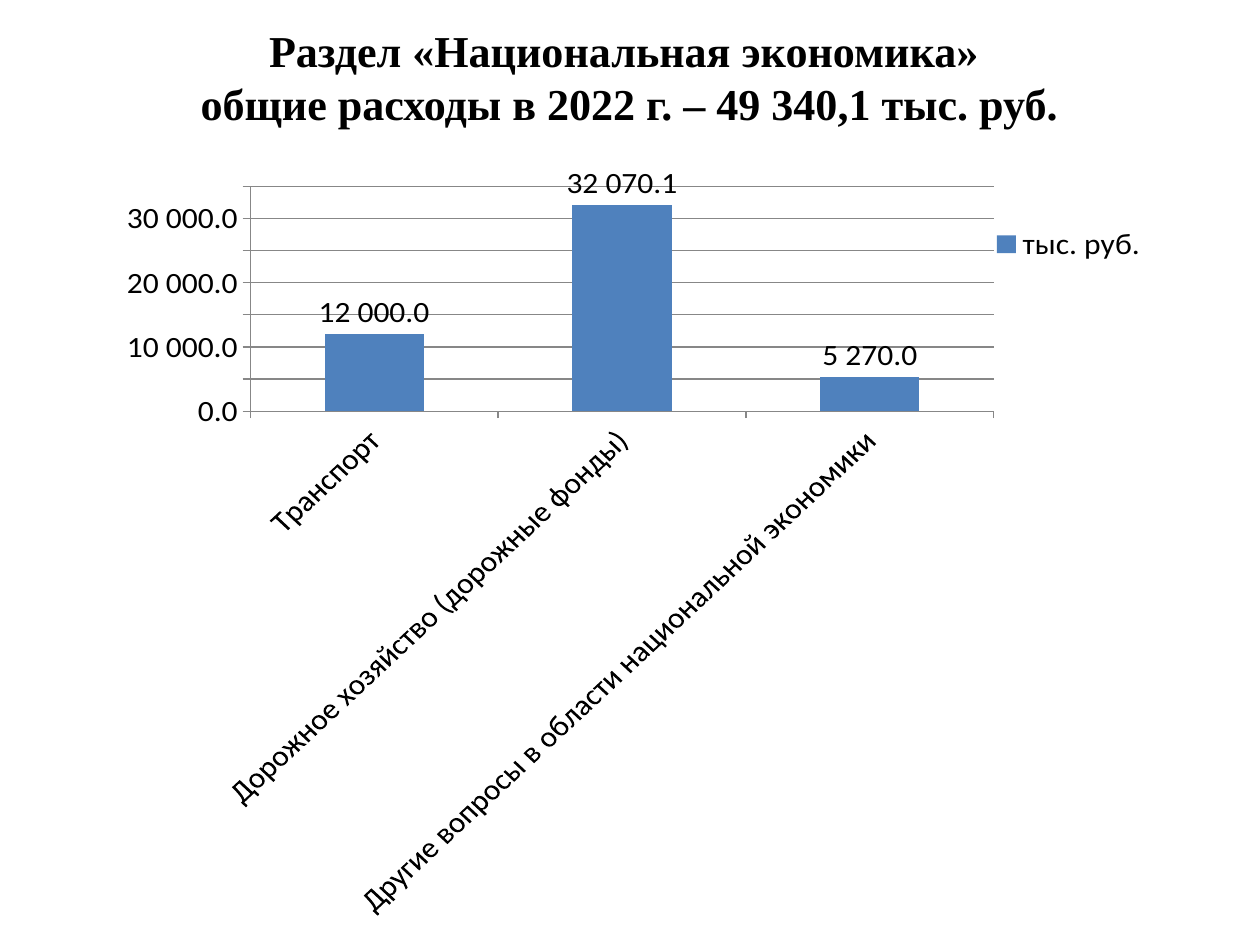
from pptx import Presentation
from pptx.chart.data import CategoryChartData
from pptx.dml.color import RGBColor
from pptx.enum.chart import XL_CHART_TYPE, XL_LABEL_POSITION, XL_LEGEND_POSITION, XL_TICK_MARK
from pptx.enum.text import MSO_ANCHOR, MSO_AUTO_SIZE, PP_ALIGN
from pptx.oxml import parse_xml
from pptx.oxml.ns import nsdecls
from pptx.util import Pt

COLUMNS = XL_CHART_TYPE.COLUMN_CLUSTERED
OUTSIDE_END = XL_LABEL_POSITION.OUTSIDE_END
LEGEND_RIGHT = XL_LEGEND_POSITION.RIGHT
TICK_OUT = XL_TICK_MARK.OUTSIDE
MIDDLE = MSO_ANCHOR.MIDDLE
NO_AUTOFIT = MSO_AUTO_SIZE.NONE
CENTER = PP_ALIGN.CENTER

BLACK = RGBColor(0x00, 0x00, 0x00)
BLUE = RGBColor(0x4F, 0x81, 0xBD)

TITLE = "Раздел «Национальная экономика» \vобщие расходы в 2022 г. – 49 340,1 тыс. руб."
SERIES_NAME = "тыс. руб. "
EXPENSES = [
    ("Транспорт", 12000),
    ("Дорожное хозяйство (дорожные фонды)", 32070.1),
    ("Другие вопросы в области национальной экономики", 5270),
]
NUMBER_FORMAT = r"#\ ##0.0"

# left, top, width, height in px
SLIDE_SIZE = (1260, 945)
TITLE_BOX = (63, 38, 1133, 77)
CHART_BOX = (105, 165, 1092, 753)
LEGEND_BOX = (992, 222, 160, 40)


def px(value):
    return round(value * 914400 / 126)


def chart_layout(box):
    """Return a manual layout placing box as fractions of the chart."""
    left, top, width, height = CHART_BOX
    fractions = {
        "x": (box[0] - left) / width,
        "y": (box[1] - top) / height,
        "w": box[2] / width,
        "h": box[3] / height,
    }
    modes = '<c:xMode val="edge"/><c:yMode val="edge"/>'
    values = "".join(f'<c:{key} val="{value:.4f}"/>' for key, value in fractions.items())
    return parse_xml(
        f'<c:layout {nsdecls("c")}><c:manualLayout>{modes}{values}'
        "</c:manualLayout></c:layout>"
    )


def add_title(slide):
    title = slide.shapes.title
    title.left, title.top, title.width, title.height = map(px, TITLE_BOX)
    frame = title.text_frame
    frame.text = TITLE
    frame.word_wrap = True
    frame.auto_size = NO_AUTOFIT
    frame.vertical_anchor = MIDDLE
    para = frame.paragraphs[0]
    para.alignment = CENTER
    for run in para.runs:
        run.font.name = "Times New Roman"
        run.font.size = Pt(25.2)
        run.font.bold = True
        run.font.color.rgb = BLACK


def add_expense_chart(slide):
    data = CategoryChartData(number_format=NUMBER_FORMAT)
    data.categories = [name for name, _ in EXPENSES]
    data.add_series(SERIES_NAME, [value for _, value in EXPENSES])
    chart = slide.shapes.add_chart(COLUMNS, *map(px, CHART_BOX), data).chart
    chart.has_title = False
    chart.font.name = "Calibri"
    chart.font.size = Pt(18)
    chart.font.color.rgb = BLACK

    plot = chart.plots[0]
    plot.gap_width = 150
    plot.vary_by_categories = False
    fill = plot.series[0].format.fill
    fill.solid()
    fill.fore_color.rgb = BLUE
    plot.has_data_labels = True
    labels = plot.data_labels
    labels.show_value = True
    labels.position = OUTSIDE_END
    labels.number_format = NUMBER_FORMAT
    labels.number_format_is_linked = False

    values, categories = chart.value_axis, chart.category_axis
    values.minimum_scale = 0
    values.maximum_scale = 35000
    values.major_unit = 5000
    values.has_major_gridlines = True
    values.tick_labels.number_format = NUMBER_FORMAT
    values.tick_labels.number_format_is_linked = False
    for axis in (values, categories):
        axis.major_tick_mark = TICK_OUT
        axis.tick_labels.font.size = Pt(18)
    category_text = categories._element.find(".//{*}txPr/{*}bodyPr")
    category_text.set("rot", "-2700000")
    category_text.set("vert", "horz")

    chart.has_legend = True
    legend = chart.legend
    legend.position = LEGEND_RIGHT
    legend.include_in_layout = False
    legend_xml = legend._element
    for layout in legend_xml.findall("{*}layout"):
        legend_xml.remove(layout)
    legend_xml.find("{*}legendPos").addnext(chart_layout(LEGEND_BOX))


def main():
    deck = Presentation()
    deck.slide_width, deck.slide_height = map(px, SLIDE_SIZE)
    slide = deck.slides.add_slide(deck.slide_layouts[5])
    add_title(slide)
    add_expense_chart(slide)
    deck.save("out.pptx")


if __name__ == "__main__":
    main()
